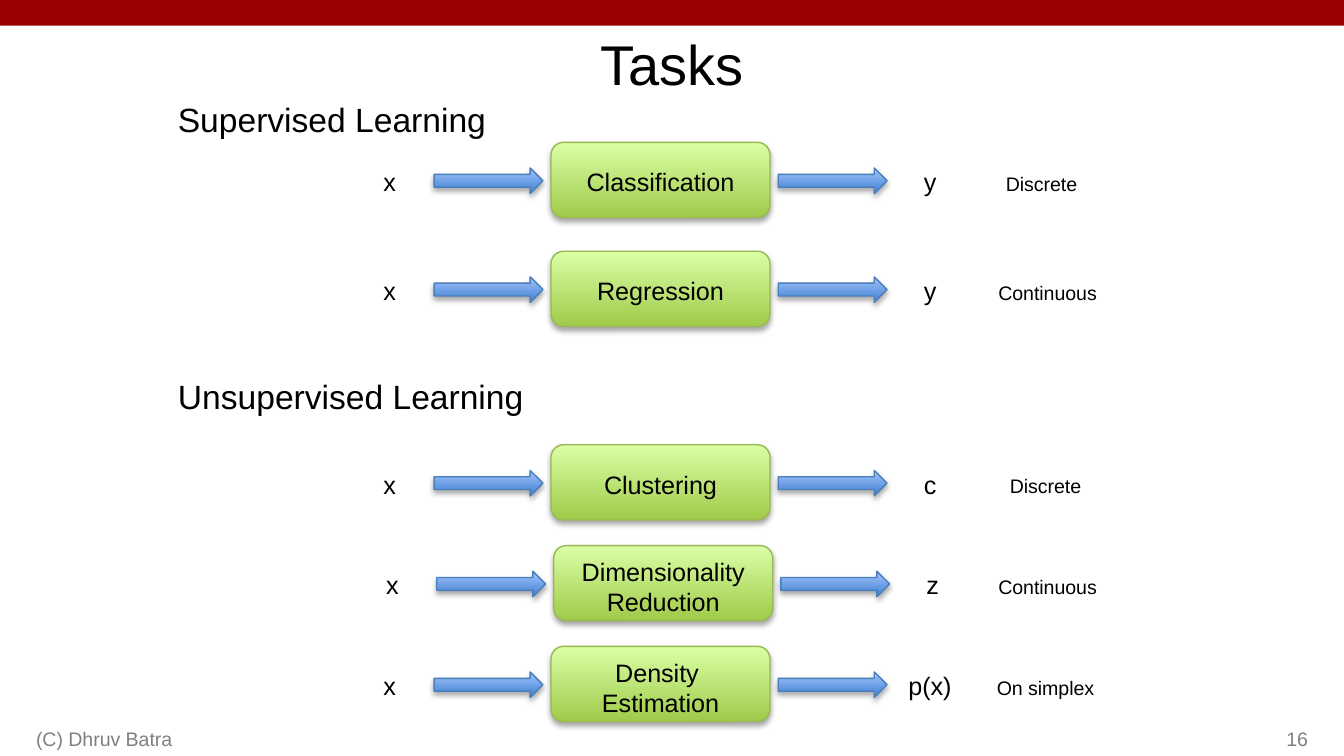
from pptx import Presentation
from pptx.dml.color import RGBColor
from pptx.enum.shapes import MSO_SHAPE
from pptx.enum.text import MSO_ANCHOR, MSO_AUTO_SIZE, PP_ALIGN
from pptx.oxml import parse_xml
from pptx.oxml.ns import nsdecls, qn
from pptx.util import Inches, Pt

RECT, ROUND, ARROW = MSO_SHAPE.RECTANGLE, MSO_SHAPE.ROUNDED_RECTANGLE, MSO_SHAPE.RIGHT_ARROW
LEFT, MID, RIGHT = PP_ALIGN.LEFT, PP_ALIGN.CENTER, PP_ALIGN.RIGHT
TOP, CENTER, BOTTOM = MSO_ANCHOR.TOP, MSO_ANCHOR.MIDDLE, MSO_ANCHOR.BOTTOM
GROW = MSO_AUTO_SIZE.SHAPE_TO_FIT_TEXT

TITLE = "Tasks"
HEADS = [("Supervised Learning", 0.69, 2.52), ("Unsupervised Learning", 2.75, 2.8)]
# fields: top, shift, task lines, output, its width, note, note left, note width
TASKS = [
    (1.06, 0, ["Classification"], "y", 0.3, "Discrete", 7.38, 0.74),
    (1.87, 0, ["Regression"], "y", 0.3, "Continuous", 7.32, 0.95),
    (3.31, 0, ["Clustering"], "c", 0.3, "Discrete", 7.41, 0.74),
    (4.06, 0.02, ["Dimensionality", "Reduction"], "z", 0.3, "Continuous", 7.32, 0.95),
    (4.81, 0, ["Density ", "Estimation"], "p(x)", 0.53, "On simplex", 7.31, 0.94),
]
FEET = [("(C) Dhruv Batra", 0.17, 3.17, LEFT), ("16", 7.75, 2.08, RIGHT)]
GREEN = ("A0CA4A", "DAFFA5", "98B955")
BLUE = ("3F80CE", "A4C4FF", "4B7EBC")
SHADE = (
    f'<a:outerShdw {nsdecls("a")} blurRad="{Pt(3.1)}" dist="{Pt(1.8)}" dir="5400000" '
    'rotWithShape="0"><a:srgbClr val="000000"><a:alpha val="35000"/></a:srgbClr></a:outerShdw>'
)


def color(code):
    """Turn a hex string into a colour."""
    return RGBColor.from_string(code)


def place(shape, *box):
    """Move and size a shape in inches."""
    shape.left, shape.top, shape.width, shape.height = map(Inches, box)


def write(frame, lines, size, align=MID, code="000000"):
    """Write lines into one paragraph, run by run."""
    para = frame.paragraphs[0]
    para.alignment = align
    for i, line in enumerate(lines):
        if i:
            para.add_line_break()
        run = para.add_run()
        run.text = line
        run.font.size, run.font.name = Pt(size), "Arial"
        run.font.color.rgb = color(code)


def label(slide, box, lines, size, align=MID, code="000000", anchor=TOP, wrap=False):
    """Add a text box."""
    frame = slide.shapes.add_textbox(*map(Inches, box)).text_frame
    frame.word_wrap, frame.vertical_anchor = wrap, anchor
    if anchor == TOP:
        frame.auto_size = GROW
    write(frame, lines, size, align, code)


def block(slide, kind, box, tones):
    """Add a shaded shape with a gradient and a soft shadow."""
    shape = slide.shapes.add_shape(kind, *map(Inches, box))
    shape.fill.gradient()
    shape.fill.gradient_angle = 90
    for stop, tone, spot in zip(shape.fill.gradient_stops, tones, (0, 1)):
        stop.color.rgb, stop.position = color(tone), spot
    shape.line.color.rgb, shape.line.width = color(tones[2]), Pt(0.75)
    shape.shadow.inherit = False
    shape._element.spPr.find(qn("a:effectLst")).append(parse_xml(SHADE))


def draw_task(slide, top, shift, lines, out, wide, note, left, span):
    """Draw one row: input, arrow, task, arrow, output and note."""
    block(slide, ROUND, (4.1 + shift, top, 1.63, 0.56), GREEN)
    tall = len(lines) > 1
    drop, high = (0.03, 0.56) if tall else (0.13, 0.33)
    label(slide, (4.1 + shift, top + drop, 1.63, high), lines, 13.5, wrap=True)
    for x in (3.23, 5.79):
        block(slide, ARROW, (x + shift, top + 0.19, 0.81, 0.19), BLUE)
    for text, mid, width in (("x", 2.9, 0.3), (out, 6.92, wide)):
        label(slide, (mid + shift - width / 2, top + 0.13, width, 0.33), [text], 13.5)
    label(slide, (left, top + 0.17, span, 0.28), [note], 10.5)


def main():
    """Build the slide and save it."""
    deck = Presentation()
    deck.slide_width, deck.slide_height = Inches(10), Inches(10) * 9 // 16
    slide = deck.slides.add_slide(deck.slide_layouts[5])
    bar = slide.shapes.add_shape(RECT, 0, 0, Inches(10), Inches(0.19))
    bar.shadow.inherit = False
    bar.fill.solid()
    bar.fill.fore_color.rgb = color("990000")
    bar.line.fill.background()

    title = slide.shapes.title
    place(title, 0.75, 0.19, 8.5, 0.56)
    title.text_frame.vertical_anchor = CENTER
    write(title.text_frame, [TITLE], 30)
    for text, left, width, align in FEET:
        label(slide, (left, 5.25, width, 0.38), [text], 10.5, align, "808080", BOTTOM, True)
    for text, top, width in HEADS:
        label(slide, (1.21, top, width, 0.4), [text], 18)
    for task in TASKS:
        draw_task(slide, *task)
    deck.save("out.pptx")


if __name__ == "__main__":
    main()
